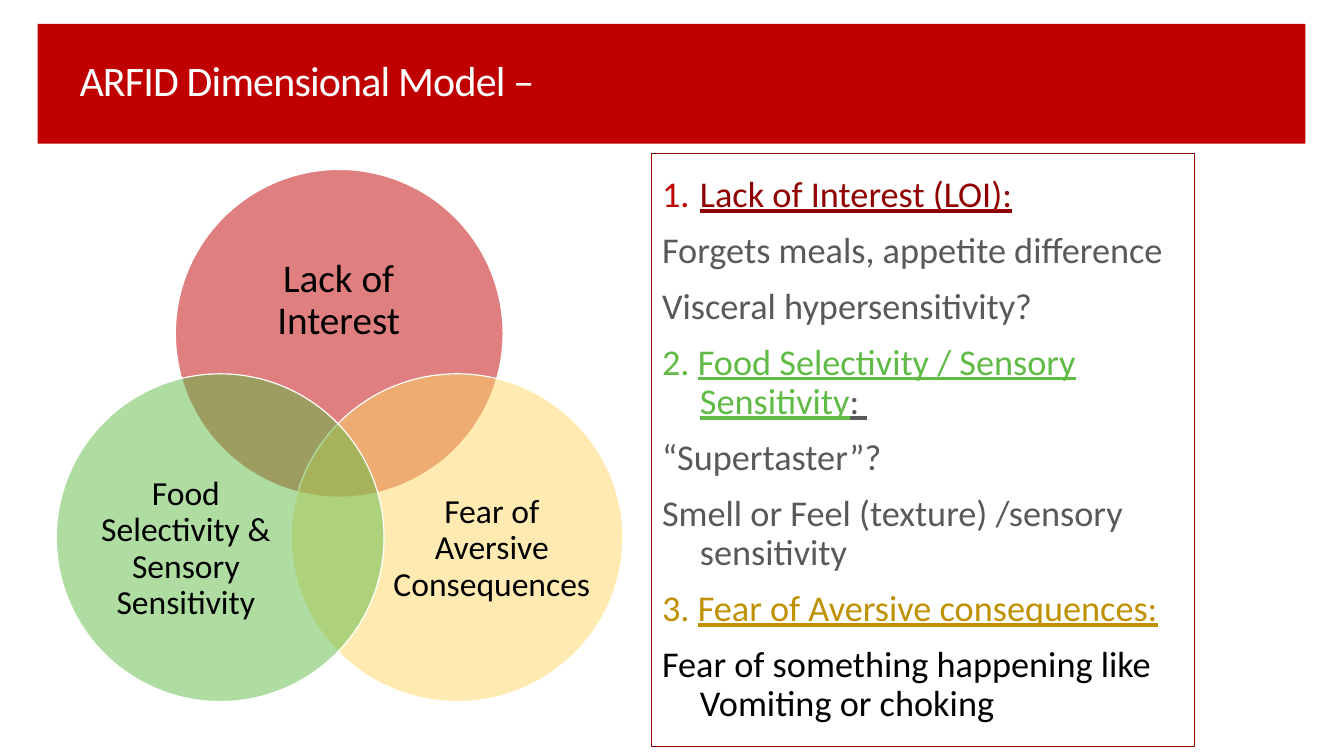
import dataclasses
import typing

import lxml.etree
import pptx
import pptx.dml.color
import pptx.enum.shapes
import pptx.enum.text
import pptx.oxml.ns
import pptx.util

Cm = pptx.util.Cm
Pt = pptx.util.Pt
ALIGN = pptx.enum.text.PP_ALIGN
MIDDLE = pptx.enum.text.MSO_ANCHOR.MIDDLE


@dataclasses.dataclass(frozen=True)
class Theme:
    font: str = "Calibri"
    white: str = "FFFFFF"
    black: str = "000000"
    red: str = "C00000"
    dark_red: str = "900000"
    green: str = "5FBB45"
    yellow: str = "FFD966"
    gold: str = "BF9000"
    grey: str = "595959"
    title_size: float = 30
    body_size: float = 25.9
    main_label_size: float = 28
    label_size: float = 24


THEME = Theme()


class Box(typing.NamedTuple):
    """Left, top, width and height in centimetres."""
    left: float
    top: float
    width: float
    height: float

    def lengths(self) -> list:
        return [Cm(value) for value in self]


class Dimension(typing.NamedTuple):
    label: str
    color: str
    size: float
    circle: Box
    label_box: Box


class Span(typing.NamedTuple):
    text: str
    color: str
    underline: bool = False


DIMENSIONS = [
    Dimension("Lack of Interest", THEME.red, THEME.main_label_size,
              Box(4.42, 4.27, 8.26, 8.26), Box(5.51, 5.72, 6.05, 3.71)),
    Dimension("Fear of Aversive Consequences", THEME.yellow, THEME.label_size,
              Box(7.34, 9.42, 8.36, 8.26), Box(9.88, 11.56, 5.03, 4.55)),
    Dimension("Food Selectivity & Sensory Sensitivity", THEME.green, THEME.label_size,
              Box(1.42, 9.42, 8.26, 8.26), Box(2.21, 11.56, 4.95, 4.55)),
]

DETAILS = [
    [Span("Lack of Interest (LOI):", THEME.dark_red, True)],
    [Span("Forgets meals, appetite difference", THEME.grey)],
    [Span("Visceral hypersensitivity?", THEME.grey)],
    [Span("2. ", THEME.green),
     Span("Food Selectivity / Sensory Sensitivity", THEME.green, True),
     Span(": ", THEME.grey, True)],
    [Span("“Supertaster”?", THEME.grey)],
    [Span("Smell or Feel (texture) /sensory sensitivity", THEME.grey)],
    [Span("3. ", THEME.gold), Span("Fear of Aversive consequences:", THEME.gold, True)],
    [Span("Fear of something happening like Vomiting or choking", THEME.black)],
]

FRAME_FORMAT = {
    "word_wrap": True,
    "auto_size": pptx.enum.text.MSO_AUTO_SIZE.NONE,
    "vertical_anchor": MIDDLE,
}
NO_MARGINS = dict.fromkeys(
    ["margin_left", "margin_top", "margin_right", "margin_bottom"], 0)


def apply_format(target: typing.Any, values: dict) -> None:
    for name, value in values.items():
        setattr(target, name, value)


def rgb(color: str) -> pptx.dml.color.RGBColor:
    return pptx.dml.color.RGBColor.from_string(color)


def add_child(parent: typing.Any, tag: str, **attributes: str) -> typing.Any:
    return lxml.etree.SubElement(parent, pptx.oxml.ns.qn(tag), attributes)


def place(shape: typing.Any, box: Box) -> None:
    apply_format(shape, dict(zip(box._fields, box.lengths())))


def add_span(paragraph: typing.Any, span: Span, size: float) -> typing.Any:
    run = paragraph.add_run()
    run.text = span.text
    apply_format(run.font, {"name": THEME.font, "size": Pt(size),
                            "underline": span.underline, "bold": False})
    run.font.color.rgb = rgb(span.color)
    return run


def add_filled(shapes: typing.Any, kind: typing.Any, box: Box, color: str) -> typing.Any:
    shape = shapes.add_shape(kind, *box.lengths())
    shape.shadow.inherit = False
    shape.fill.solid()
    shape.fill.fore_color.rgb = rgb(color)
    return shape


def add_header(slide: typing.Any) -> None:
    title = slide.shapes.title
    place(title, Box(1.75, 0.84, 29.31, 2.51))
    apply_format(title.text_frame, FRAME_FORMAT)
    heading = title.text_frame.paragraphs[0]
    apply_format(heading, {"alignment": ALIGN.LEFT, "line_spacing": 0.9})
    run = add_span(heading, Span("ARFID Dimensional Model –", THEME.white), THEME.title_size)
    run.font._element.set("spc", "-60")

    banner = add_filled(slide.shapes, pptx.enum.shapes.MSO_SHAPE.RECTANGLE,
                        Box(0.95, 0.6, 31.95, 3.02), THEME.red)
    banner.line.fill.background()
    title.element.addprevious(banner.element)


def add_dimension(shapes: typing.Any, dimension: Dimension) -> None:
    """Draw a half-transparent circle of the Venn diagram and its label."""
    circle = add_filled(shapes, pptx.enum.shapes.MSO_SHAPE.OVAL,
                        dimension.circle, dimension.color)
    fill_color = circle.element.spPr.find(".//" + pptx.oxml.ns.qn("a:srgbClr"))
    add_child(fill_color, "a:alpha", val="50000")
    circle.line.color.rgb = rgb(THEME.white)
    circle.line.width = Pt(0.85)

    label = shapes.add_textbox(*dimension.label_box.lengths())
    apply_format(label.text_frame, FRAME_FORMAT | NO_MARGINS)
    paragraph = label.text_frame.paragraphs[0]
    apply_format(paragraph, {"alignment": ALIGN.CENTER, "line_spacing": 0.9})
    add_span(paragraph, Span(dimension.label, THEME.black), dimension.size)


def add_details(body: typing.Any) -> None:
    place(body, Box(16.43, 3.86, 13.67, 14.96))
    body.line.color.rgb = rgb(THEME.dark_red)
    body.line.width = Pt(0.75)
    frame = body.text_frame
    apply_format(frame, FRAME_FORMAT)
    for index, spans in enumerate(DETAILS):
        numbered = index == 0
        paragraph = frame.paragraphs[0] if numbered else frame.add_paragraph()
        properties = paragraph._p.get_or_add_pPr()
        indent = Cm(1.27) if numbered else 0
        apply_format(properties, {"marL": indent, "indent": -indent})
        if numbered:
            add_child(add_child(properties, "a:buClr"), "a:srgbClr", val=THEME.red)
            add_child(properties, "a:buFont", typeface=THEME.font)
            add_child(properties, "a:buAutoNum", type="arabicPeriod")
        else:
            add_child(properties, "a:buNone")
        apply_format(paragraph, {"alignment": ALIGN.LEFT, "line_spacing": 0.9,
                                 "space_before": Pt(0 if numbered else 12)})
        for span in spans:
            add_span(paragraph, span, THEME.body_size)


def main() -> None:
    presentation = pptx.Presentation()
    apply_format(presentation, {"slide_width": Cm(33.87), "slide_height": Cm(19.05)})
    slide = presentation.slides.add_slide(presentation.slide_layouts[1])
    add_header(slide)
    venn = slide.shapes.add_group_shape()
    for dimension in DIMENSIONS:
        add_dimension(venn.shapes, dimension)
    add_details(slide.placeholders[1])
    presentation.save("out.pptx")


if __name__ == "__main__":
    main()
